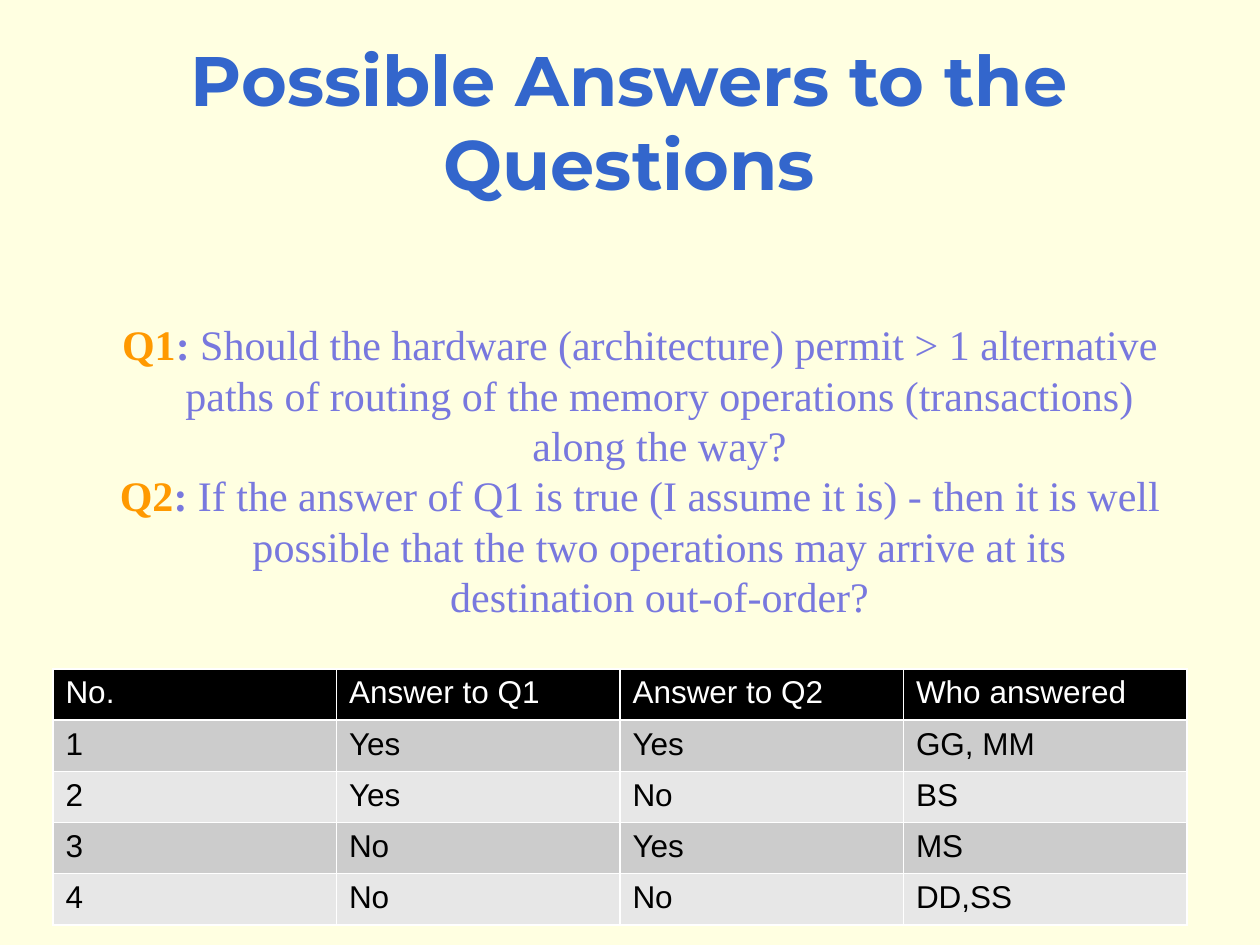
"""Build the slide of questions with its table of possible answers."""
from lxml import etree
from pptx import Presentation
from pptx.dml.color import RGBColor
from pptx.enum import text as t
from pptx.oxml import ns
from pptx.util import Inches, Pt

BLUE, ORANGE, VIOLET = "3366CC", "FF9900", "7878DE"
BLACK, WHITE, CREAM = "000000", "FFFFFF", "FFFFE1"
BANDS = ("CCCCCC", "E7E7E7")
QUESTIONS = {
    "Q1": "Should the hardware (architecture) permit > 1 alternative paths of "
          "routing of the memory operations (transactions) along the way?",
    "Q2": "If the answer of Q1 is true (I assume it is) - then it is well possible "
          "that the two operations may arrive at its destination out-of-order?",
}
ANSWERS = [
    ("No.", "Answer to Q1", "Answer to Q2", "Who answered"),
    ("1", "Yes", "Yes", "GG, MM"),
    ("2", "Yes", "No", "BS"),
    ("3", "No", "Yes", "MS"),
    ("4", "No", "No", "DD,SS"),
]


def paint(fill, color):
    """Make a fill solid in the given hex color."""
    fill.solid()
    fill.fore_color.rgb = RGBColor.from_string(color)


def add_run(paragraph, words, font, size, color, bold=False):
    """Append formatted words to a paragraph."""
    run = paragraph.add_run()
    run.text = words
    run.font.name, run.font.size, run.font.bold = font, Pt(size), bold
    run.font.color.rgb = RGBColor.from_string(color)


def add_frame(slide, left, top, width, height, anchor):
    """Add a wrapping text box and return its text frame."""
    box = slide.shapes.add_textbox(*map(Inches, (left, top, width, height)))
    frame = box.text_frame
    frame.word_wrap, frame.vertical_anchor = True, anchor
    return frame


def add_title(slide):
    """Add the centred title."""
    heading = add_frame(slide, 0.08, 0.33, 9.83, 1.25, t.MSO_ANCHOR.MIDDLE).paragraphs[0]
    heading.alignment = t.PP_ALIGN.CENTER
    add_run(heading, "Possible Answers to the Questions", "Montserrat", 40, BLUE, bold=True)


def add_questions(slide):
    """Add the questions as centred paragraphs with a hanging indent."""
    frame = add_frame(slide, 0.33, 2.48, 9, 2.52, t.MSO_ANCHOR.TOP)
    for index, (label, question) in enumerate(QUESTIONS.items()):
        paragraph = frame.add_paragraph() if index else frame.paragraphs[0]
        paragraph.alignment = t.PP_ALIGN.CENTER
        properties = paragraph._p.get_or_add_pPr()
        properties.set("marL", str(Inches(0.81)))
        properties.set("indent", str(Inches(-0.31)))
        for words, color, bold in ((label, ORANGE, True), (":", VIOLET, True),
                                   (f" {question}", VIOLET, False)):
            add_run(paragraph, words, "Times New Roman", 24, color, bold)


def add_borders(cell, color, width):
    """Draw a line on all four sides of a table cell."""
    properties = cell._tc.get_or_add_tcPr()
    for index, side in enumerate(("lnL", "lnR", "lnT", "lnB")):
        line = etree.Element(ns.qn(f"a:{side}"), w=str(Pt(width)))
        solid = etree.SubElement(line, ns.qn("a:solidFill"))
        etree.SubElement(solid, ns.qn("a:srgbClr"), val=color)
        properties.insert(index, line)


def add_answers(slide):
    """Add the banded table of answers."""
    size = len(ANSWERS), len(ANSWERS[0])
    frame = slide.shapes.add_table(*size, *map(Inches, (0.42, 5.31, 9, 2.03)))
    for row, entries in enumerate(ANSWERS):
        for column, entry in enumerate(entries):
            cell = frame.table.cell(row, column)
            paint(cell.fill, BANDS[(row - 1) % 2] if row else BLACK)
            add_borders(cell, WHITE, 1)
            add_run(cell.text_frame.paragraphs[0], entry, "Arial", 18,
                    BLACK if row else WHITE)


def main():
    """Build and save the slide."""
    deck = Presentation()
    deck.slide_width, deck.slide_height = Inches(10), Inches(7.5)
    slide = deck.slides.add_slide(deck.slide_layouts[6])
    paint(slide.background.fill, CREAM)
    add_title(slide)
    add_answers(slide)
    add_questions(slide)
    deck.save("out.pptx")


if __name__ == "__main__":
    main()
